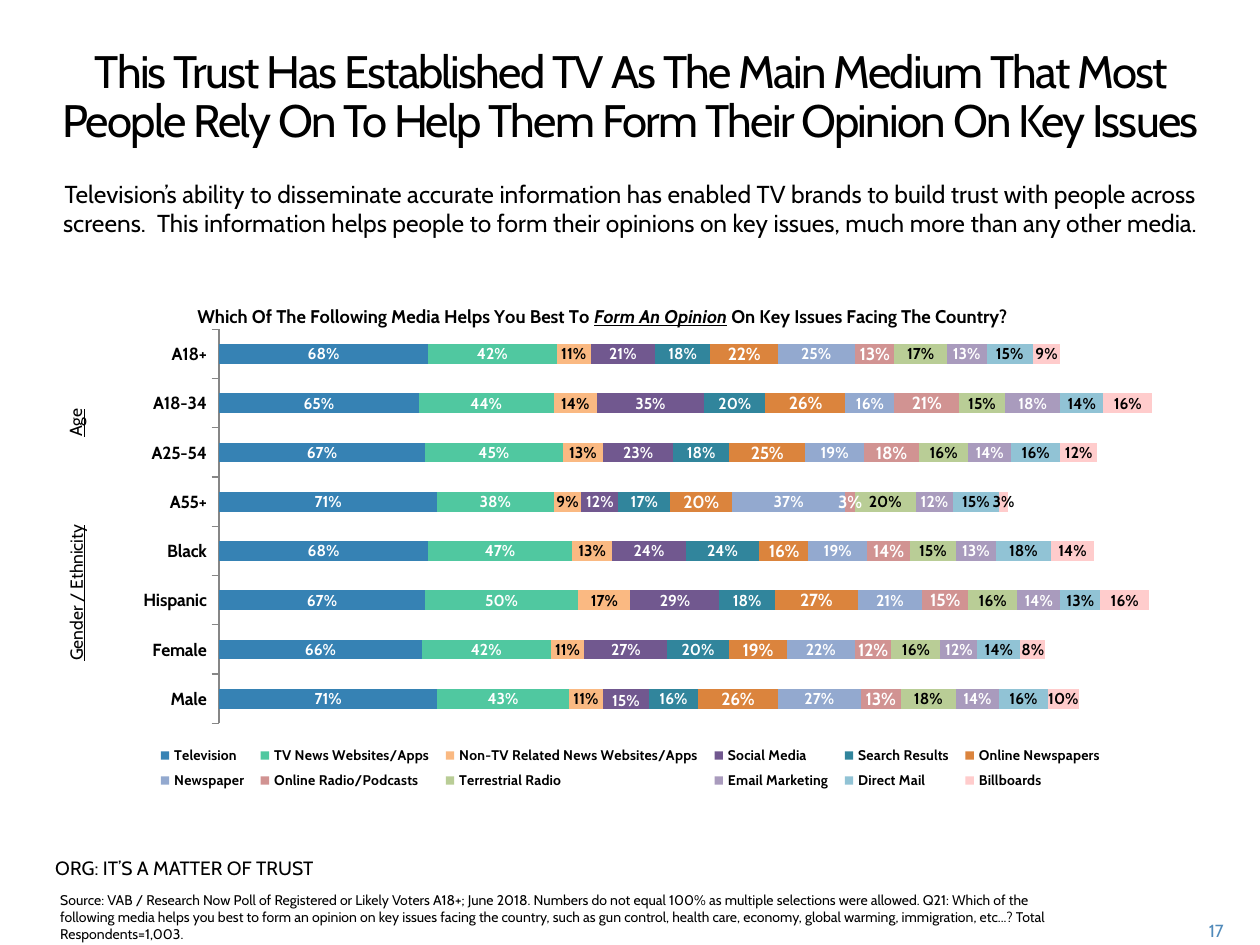
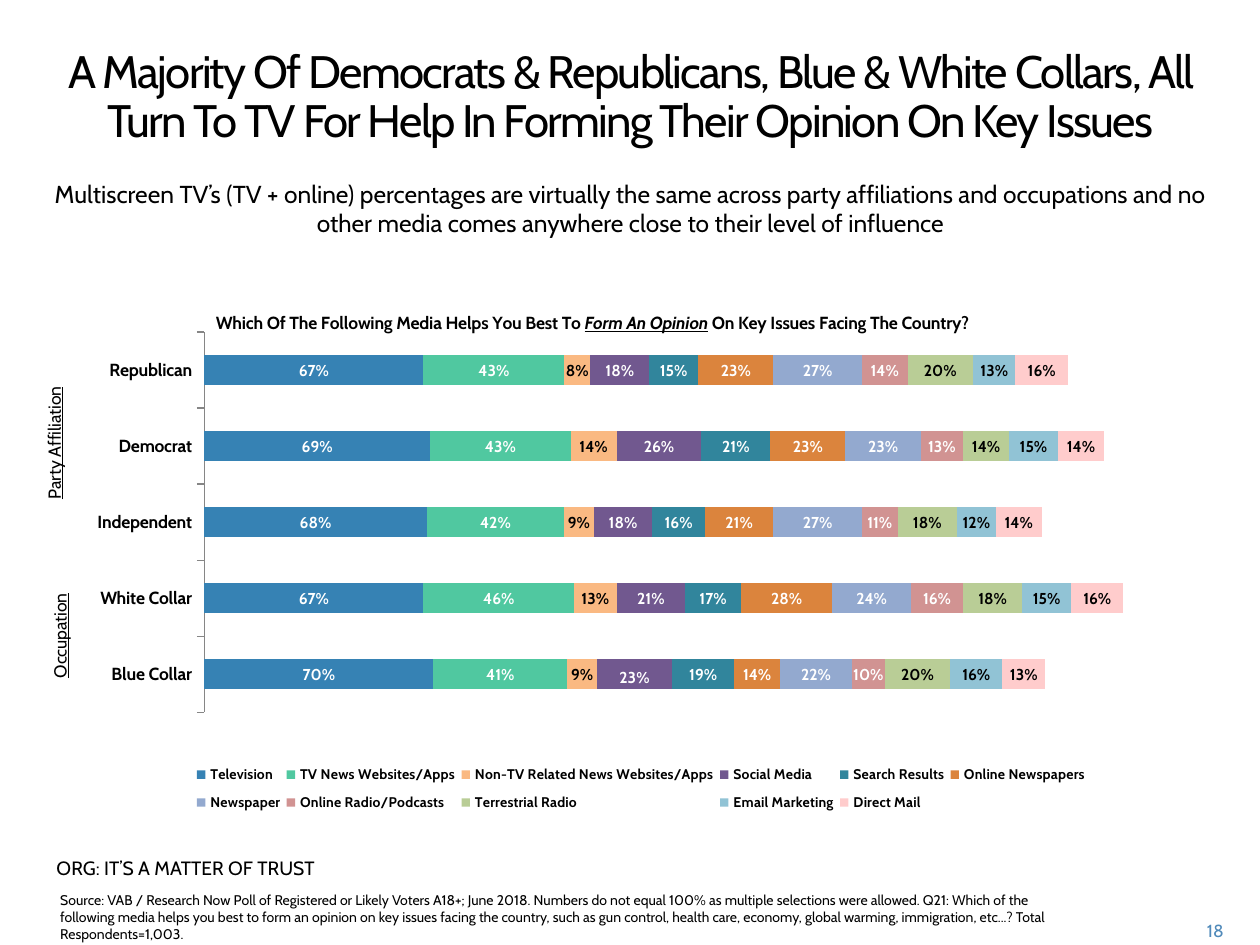
from dataclasses import dataclass

from lxml import etree
from pptx import Presentation
from pptx import util as u
from pptx.chart import data as chart_data
from pptx.dml.color import RGBColor
from pptx.enum import chart as charts, text

# Shared style
FONT = "Cabin"
COLORS = {
    "black": "000000", "white": "FFFFFF", "page": "508ABA", "axis": "868686",
    "blue": "3682B4", "green": "50C8A0", "peach": "FAB982", "purple": "71588F",
    "teal": "31859C", "orange": "DB843D", "periwinkle": "93A9CF", "rose": "D19392",
    "olive": "B9CD96", "lilac": "A99BBD", "sky": "91C3D5", "pink": "FFCCCC",
}
DARK_LABELS = {"peach", "olive", "sky", "pink"}
MEDIA = ["Television", "TV News Websites/Apps", "Non-TV Related News Websites/Apps",
         "Social Media", "Search Results", "Online Newspapers", "Newspaper",
         "Online Radio/Podcasts", "Terrestrial Radio", "Email Marketing",
         "Direct Mail", "Billboards"]
FILLS = ["blue", "green", "peach", "purple", "teal", "orange", "periwinkle", "rose",
         "olive", "lilac", "sky", "pink"]
QUESTION = ["Which Of The Following Media Helps You Best To ", "Form An Opinion",
            " On Key Issues Facing The Country?"]
FOOTER = "ORG: IT’S A MATTER OF TRUST"
SOURCE = ("Source: VAB / Research Now Poll of Registered or Likely Voters A18+; June 2018. "
          "Numbers do not equal 100% as multiple selections were allowed. Q21: Which of the "
          "following media helps you best to form an opinion on key issues facing the country, "
          "such as gun control, health care, economy, global warming, immigration, etc...? "
          "Total Respondents=1,003.")
LEFT, CENTER, RIGHT = (text.PP_ALIGN.LEFT, text.PP_ALIGN.CENTER, text.PP_ALIGN.RIGHT)


@dataclass
class Box:
    """Position and size in percent of the slide."""
    x: float
    y: float
    w: float
    h: float


@dataclass
class GroupLabel:
    text: str
    box: Box


@dataclass
class MediaChart:
    box: Box
    groups: list[str]
    percents: list[list[int]]  # one row per medium
    fills: list[str]
    axis_max: float
    title_size: float
    large_labels: set[str]
    title_at: tuple[float, ...]  # shares of the chart
    plot_at: tuple[float, ...]
    legend_at: tuple[float, ...]
    nudge: float


@dataclass
class Page:
    number: int
    title: str
    subtitle: str
    footer_x: float
    chart: MediaChart
    labels: list[GroupLabel]


PAGES = [
    Page(
        17,
        "This Trust Has Established TV As The Main Medium That Most People Rely On To "
        "Help Them Form Their Opinion On Key Issues",
        "Television’s ability to disseminate accurate information has enabled TV brands to "
        "build trust with people across screens.  This information helps people to form their "
        "opinions on key issues, much more than any other media.",
        3.4,
        MediaChart(
            Box(7.4, 28.8, 88.4, 57.2),
            ["Male", "Female", "Hispanic", "Black", "A55+", "A25-54", "A18-34", "A18+"],
            [[71, 66, 67, 68, 71, 67, 65, 68],
             [43, 42, 50, 47, 38, 45, 44, 42],
             [11, 11, 17, 13, 9, 13, 14, 11],
             [15, 27, 29, 24, 12, 23, 35, 21],
             [16, 20, 18, 24, 17, 18, 20, 18],
             [26, 19, 27, 16, 20, 25, 26, 22],
             [27, 22, 21, 19, 37, 19, 16, 25],
             [13, 12, 15, 14, 3, 18, 21, 13],
             [18, 16, 16, 15, 20, 16, 15, 17],
             [14, 12, 14, 13, 12, 14, 18, 13],
             [16, 14, 13, 18, 15, 16, 14, 15],
             [10, 8, 16, 14, 3, 12, 16, 9]],
            FILLS, 3.2, 10.5, {"orange", "rose"},
            (0.09, 0.05), (0.113, 0.106, 0.882, 0.729), (0.05, 0.865, 0.865, 0.105), 0.004),
        [GroupLabel("Age", Box(2.8, 42.93, 6.4, 3.6)),
         GroupLabel("Gender / Ethnicity", Box(-1.6, 60.93, 15.3, 3.6))],
    ),
    Page(
        18,
        "A Majority Of Democrats & Republicans, Blue & White Collars, All Turn To TV For "
        "Help In Forming Their Opinion On Key Issues",
        "Multiscreen TV’s (TV + online) percentages are virtually the same across party "
        "affiliations and occupations and no other media comes anywhere close to their level "
        "of influence",
        3.5,
        MediaChart(
            Box(5.9, 28.27, 88.2, 63.07),
            ["Blue Collar", "White Collar", "Independent", "Democrat", "Republican"],
            [[70, 67, 68, 69, 67],
             [41, 46, 42, 43, 43],
             [9, 13, 9, 14, 8],
             [23, 21, 18, 26, 18],
             [19, 17, 16, 21, 15],
             [14, 28, 21, 23, 23],
             [22, 24, 27, 23, 27],
             [10, 16, 11, 13, 14],
             [20, 18, 18, 14, 20],
             [16, 15, 12, 15, 13],
             [13, 16, 14, 14, 16]],
            [f for f in FILLS if f != "lilac"], 3, 10, set(),
            (0.124, 0.065), (0.117, 0.109, 0.883, 0.638), (0.105, 0.82, 0.81, 0.11), 0.006),
        [GroupLabel("Party Affiliation", Box(-2.3, 44.8, 13.6, 4.13)),
         GroupLabel("Occupation", Box(-2.9, 65.47, 15.3, 3.6))],
    ),
]

prs = Presentation()
prs.slide_width, prs.slide_height = u.Inches(10), u.Inches(7.5)


def place(box: Box) -> tuple[int, ...]:
    w, h = prs.slide_width / 100, prs.slide_height / 100
    return tuple(round(v) for v in (box.x * w, box.y * h, box.w * w, box.h * h))


def set_font(font, size: float, color: str = "black", bold: bool = False) -> None:
    font.name, font.size, font.bold = FONT, u.Pt(size), bold
    font.color.rgb = RGBColor.from_string(COLORS[color])


def add_text(slide, content: str, box: Box, *, size: float, color: str = "black",
             align=LEFT, line: float | None = None, tracking: int = 0,
             underline: bool = False, rotation: int = 0) -> None:
    sp = slide.shapes.add_textbox(*place(box))
    sp.rotation = rotation
    tf = sp.text_frame
    tf.word_wrap = True
    p = tf.paragraphs[0]
    p.alignment = align
    if line:
        p.line_spacing = u.Pt(line)
    r = p.add_run()
    r.text = content
    set_font(r.font, size, color)
    if underline:
        r.font.underline = True
    if tracking:
        r.font._element.set("spc", str(tracking))


def set_layout(chart, parent_path: str, after: str | None, at: tuple[float, ...],
               absolute: bool = True, inner: bool = False) -> None:
    """Give a chart part a manual place, in shares of the chart."""
    parent = chart.element.xpath(parent_path)[0]
    ns = chart.element.nsmap["c"]
    for old in parent.findall(f"{{{ns}}}layout"):
        parent.remove(old)
    layout = etree.Element(f"{{{ns}}}layout")
    manual = etree.SubElement(layout, f"{{{ns}}}manualLayout")
    entries = [("layoutTarget", "inner")] if inner else []
    if absolute:
        entries += [("xMode", "edge"), ("yMode", "edge")]
    entries += zip("xywh", at)
    for tag, value in entries:
        etree.SubElement(manual, f"{{{ns}}}{tag}").set("val", str(value))
    if after:
        parent.find(f"{{{ns}}}{after}").addnext(layout)
    else:
        parent.insert(0, layout)


def add_media_chart(slide, mc: MediaChart) -> None:
    data = chart_data.CategoryChartData(number_format="0%")
    data.categories = mc.groups
    for name, row in zip(MEDIA, mc.percents):
        data.add_series(name, [v / 100 for v in row])
    chart = slide.shapes.add_chart(charts.XL_CHART_TYPE.BAR_STACKED, *place(mc.box), data).chart
    set_font(chart.font, 10)

    # Question above the bars
    chart.has_title = True
    p = chart.chart_title.text_frame.paragraphs[0]
    for i, part in enumerate(QUESTION):
        r = p.add_run()
        r.text = part
        set_font(r.font, mc.title_size, bold=True)
        r.font.italic = r.font.underline = i == 1
    chart.chart_title.include_in_layout = False if hasattr(
        chart.chart_title, "include_in_layout") else None

    # Axes
    axis = chart.category_axis
    set_font(axis.tick_labels.font, 10, bold=True)
    axis.major_tick_mark = charts.XL_TICK_MARK.OUTSIDE
    axis.format.line.color.rgb = RGBColor.from_string(COLORS["axis"])
    values = chart.value_axis
    values.minimum_scale, values.maximum_scale = 0, mc.axis_max
    values.has_major_gridlines = values.visible = False

    # Bars and their labels
    plot = chart.plots[0]
    plot.gap_width, plot.overlap, plot.vary_by_categories = 150, 100, False
    for series, fill in zip(plot.series, mc.fills):
        series.format.fill.solid()
        series.format.fill.fore_color.rgb = RGBColor.from_string(COLORS[fill])
        label_color = "black" if fill in DARK_LABELS else "white"
        labels = series.data_labels
        labels.show_value = True
        labels.number_format, labels.number_format_is_linked = "0%", False
        set_font(labels.font, 10 if fill in mc.large_labels else 9, label_color, bold=True)
        if fill == "purple":
            set_font(series.points[0].data_label.font, 9, label_color, bold=True)

    # Legend and manual places
    chart.has_legend = True
    chart.legend.position = charts.XL_LEGEND_POSITION.BOTTOM
    chart.legend.include_in_layout = False
    set_font(chart.legend.font, 8, bold=True)
    set_layout(chart, "c:chart/c:title", "tx", mc.title_at)
    set_layout(chart, "c:chart/c:plotArea", None, mc.plot_at, inner=True)
    set_layout(chart, "c:chart/c:legend", "legendPos", mc.legend_at)
    set_layout(chart, ".//c:dLbl", "idx", (0, mc.nudge), absolute=False)


def add_page(page: Page) -> None:
    slide = prs.slides.add_slide(prs.slide_layouts[6])
    add_text(slide, str(page.number), Box(92, 96.67, 6.1, 3.33), size=10, color="page",
             align=RIGHT)
    add_text(slide, FOOTER, Box(page.footer_x, 90, 23.3, 4.27), size=11)
    add_text(slide, SOURCE, Box(3.8, 93.73, 80.3, 4.53), size=8)
    add_media_chart(slide, page.chart)
    add_text(slide, page.subtitle, Box(1.9, 18.27, 96.3, 10.67), size=14, align=CENTER)
    add_text(slide, page.title, Box(1.9, 4.53, 96.3, 12.27), size=26, align=CENTER,
             line=28, tracking=-100)
    for label in page.labels:
        add_text(slide, label.text, label.box, size=10, align=CENTER, underline=True,
                 rotation=270)


def main() -> None:
    for page in PAGES:
        add_page(page)
    prs.save("out.pptx")


if __name__ == "__main__":
    main()
